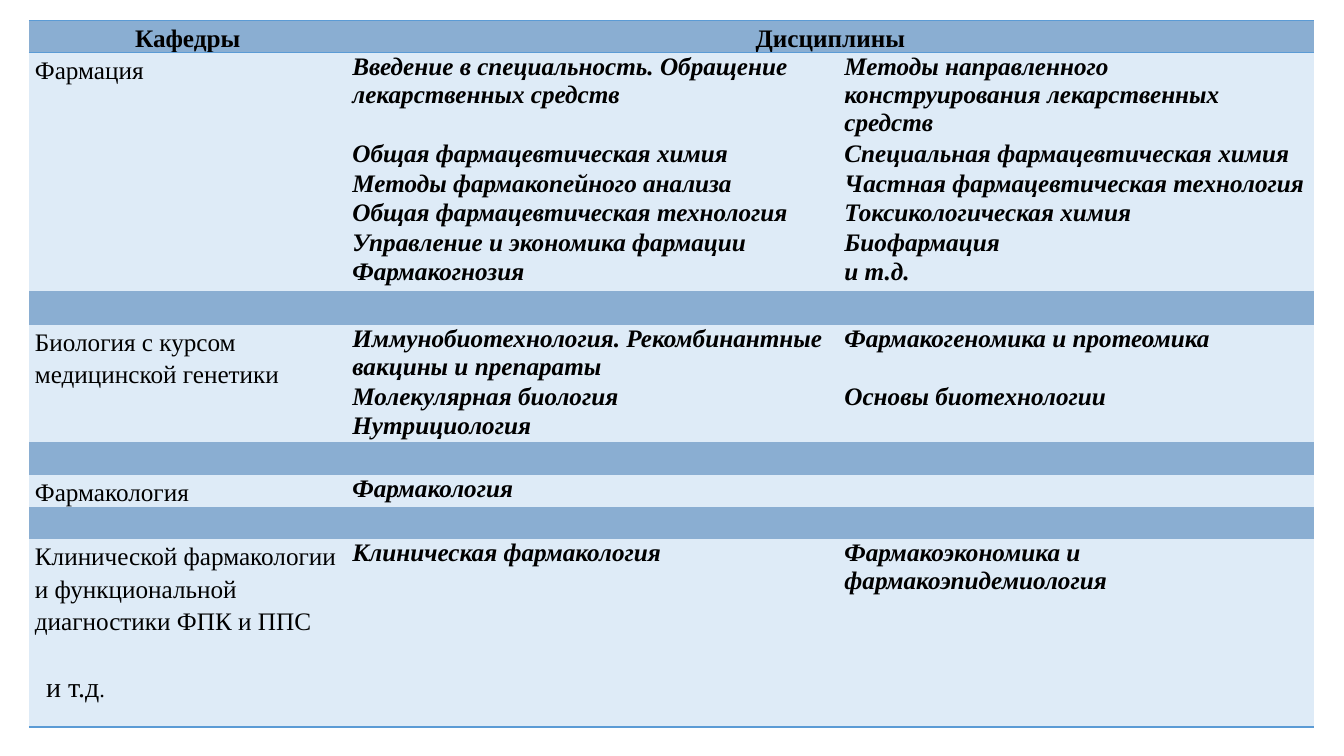
"""Build a slide with a table of departments and the disciplines they teach."""
from lxml import etree
from pptx import Presentation
from pptx import util as u
from pptx.dml.color import RGBColor
from pptx.enum import text
from pptx.oxml import ns

COLORS = {"band": "8AAED2", "body": "DEEBF7", "line": "5B9BD5", "text": "000000"}
NO_GRID = "{2D5ABB26-0587-4C30-8999-92F81FD0307C}"

ROWS = [
    (0.81, "Кафедры", "Дисциплины", ""),
    (2.21, "Фармация", "Введение в специальность. Обращение лекарственных средств",
     "Методы направленного конструирования лекарственных средств"),
    (0.74, "", "Общая фармацевтическая химия", "Специальная фармацевтическая химия"),
    (0.74, "", "Методы фармакопейного анализа", "Частная фармацевтическая технология"),
    (0.74, "", "Общая фармацевтическая технология", "Токсикологическая химия"),
    (0.74, "", "Управление и экономика фармации", "Биофармация"),
    (0.84, "", "Фармакогнозия", "и т.д."),
    (0.84, "", "", ""),
    (1.47, "Биология с курсом медицинской генетики",
     "Иммунобиотехнология. Рекомбинантные вакцины и препараты",
     "Фармакогеномика и протеомика"),
    (0.74, "", "Молекулярная биология", "Основы биотехнологии"),
    (0.74, "", "Нутрициология", ""),
    (0.84, "", "", ""),
    (0.81, "Фармакология", "Фармакология", ""),
    (0.81, "", "", ""),
    (2.49, "Клинической фармакологии и функциональной диагностики ФПК и ППС",
     "Клиническая фармакология", "Фармакоэкономика и фармакоэпидемиология"),
    (2.24, "", "", ""),
]
WIDTHS = [8, 12.4, 11.99]
LAST = len(ROWS) - 1


def add_border(cell, side):
    """Draw a one-point line on one side of a cell."""
    ln = etree.Element(ns.qn(f"a:ln{side}"), w=str(u.Pt(1)))
    fill = etree.SubElement(ln, ns.qn("a:solidFill"))
    etree.SubElement(fill, ns.qn("a:srgbClr"), val=COLORS["line"])
    cell._tc.get_or_add_tcPr().insert(0, ln)


prs = Presentation()
prs.slide_width, prs.slide_height = u.Cm(33.87), u.Cm(19.05)
s = prs.slides.add_slide(prs.slide_layouts[6])

frame = s.shapes.add_table(len(ROWS), len(WIDTHS), u.Cm(0.73), u.Cm(0.52),
                           u.Cm(sum(WIDTHS)), u.Cm(sum(row[0] for row in ROWS)))
tbl = frame.table
tbl.first_row = tbl.horz_banding = False
tbl._tbl.tblPr.find(ns.qn("a:tableStyleId")).text = NO_GRID
for column, width in zip(tbl.columns, WIDTHS):
    column.width = u.Cm(width)

for i, (height, *labels) in enumerate(ROWS):
    tbl.rows[i].height = u.Cm(height)
    header = i == 0
    band = header or (not any(labels) and i < LAST)
    for j, label in enumerate(labels):
        cell = tbl.cell(i, j)
        cell.margin_left = cell.margin_right = u.Cm(0.15)
        cell.margin_top = cell.margin_bottom = 0
        cell.fill.solid()
        cell.fill.fore_color.rgb = RGBColor.from_string(COLORS["band" if band else "body"])
        p = cell.text_frame.paragraphs[0]
        if label:
            p.text = label
        p.font.name, p.font.size = "Times New Roman", u.Pt(18)
        p.font.color.rgb = RGBColor.from_string(COLORS["text"])
        p.font.bold = header or j > 0
        p.font.italic = not header and j > 0
        if header:
            p.alignment = text.PP_ALIGN.CENTER
        if label and (header or j == 0):
            p.line_spacing = 1.15
        if header or i == LAST:
            add_border(cell, "B")
        if header:
            add_border(cell, "T")

tbl.cell(0, 1).merge(tbl.cell(0, 2))
tbl.cell(1, 0).merge(tbl.cell(5, 0))
tbl.cell(8, 0).merge(tbl.cell(10, 0))

more = tbl.cell(LAST, 0)
more.margin_left, more.margin_top = u.Cm(0.43), u.Cm(0.75)
p = more.text_frame.paragraphs[0]
p.line_spacing = 1.15
for part, size in (("и т.д", 20), (".", 16)):
    r = p.add_run()
    r.text = part
    r.font.size = u.Pt(size)

prs.save("out.pptx")
